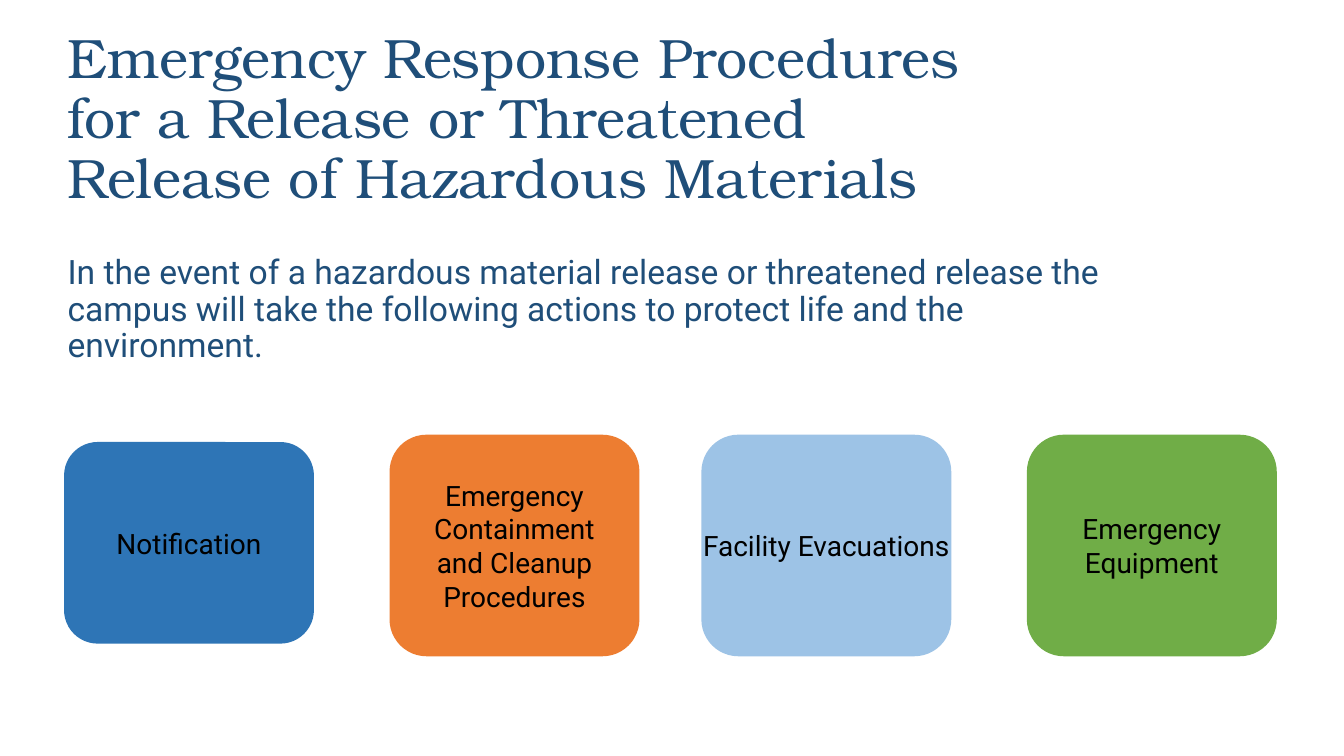
from pptx import Presentation
from pptx.dml.color import RGBColor
from pptx.enum.shapes import MSO_SHAPE
from pptx.enum.text import MSO_ANCHOR, PP_ALIGN
from pptx.util import Pt

PX = 9525
ROUNDED = MSO_SHAPE.ROUNDED_RECTANGLE
MIDDLE = MSO_ANCHOR.MIDDLE
LEFT, CENTER = PP_ALIGN.LEFT, PP_ALIGN.CENTER

NAVY = RGBColor(0x1F, 0x4E, 0x79)
BLACK = RGBColor(0x00, 0x00, 0x00)
BLUE = RGBColor(0x2E, 0x75, 0xB6)
ORANGE = RGBColor(0xED, 0x7D, 0x31)
LIGHT_BLUE = RGBColor(0x9D, 0xC3, 0xE6)
GREEN = RGBColor(0x70, 0xAD, 0x47)

HEADING_FONT = "TeX Gyre Bonum"
BODY_FONT = "Roboto"

CARD_WIDTH = 238
CARD_INSET = 14
CARDS = [
    ("Notification", BLUE, 61, 421, 192, True),
    ("Emergency Containment and Cleanup Procedures", ORANGE, 371, 414, 211, True),
    ("Facility Evacuations", LIGHT_BLUE, 668, 414, 211, False),
    ("Emergency Equipment", GREEN, 978, 414, 211, True),
]


def px(*lengths):
    return [length * PX for length in lengths]


def write(tf, text, font, size, color, align, spacing):
    tf.text = text
    p = tf.paragraphs[0]
    p.alignment = align
    p.line_spacing = spacing
    p.space_before = Pt(0)
    p.font.name = font
    p.font.size = Pt(size)
    p.font.color.rgb = color


def add_title(s, text):
    sp = s.shapes.title
    sp.left, sp.top, sp.width, sp.height = px(55, 61, 907, 108)
    tf = sp.text_frame
    tf.word_wrap = True
    tf.vertical_anchor = MIDDLE
    write(tf, text, HEADING_FONT, 39.6, NAVY, LEFT, 0.9)


def add_intro(s, text):
    tf = s.shapes.add_textbox(*px(55, 239, 1020, 119)).text_frame
    tf.word_wrap = True
    write(tf, text, BODY_FONT, 24, NAVY, LEFT, 0.9)


def add_card(s, text, color, left, top, height, wrap):
    sp = s.shapes.add_shape(ROUNDED, *px(left, top, CARD_WIDTH, height))
    sp.shadow.inherit = False
    sp.fill.solid()
    sp.fill.fore_color.rgb = color
    sp.line.fill.background()
    tf = sp.text_frame
    tf.word_wrap = wrap
    tf.vertical_anchor = MIDDLE
    tf.margin_left = tf.margin_right = CARD_INSET * PX
    write(tf, text, BODY_FONT, 20, BLACK, CENTER, 1.0)


def main():
    prs = Presentation()
    prs.slide_width, prs.slide_height = px(1280, 720)
    s = prs.slides.add_slide(prs.slide_layouts[5])
    add_title(s, "Emergency Response Procedures for a Release or Threatened "
                 "Release of Hazardous Materials")
    add_intro(s, "In the event of a hazardous material release or threatened "
                 "release the campus will take the following actions to "
                 "protect life and the environment.")
    for card in CARDS:
        add_card(s, *card)
    prs.save("out.pptx")


if __name__ == "__main__":
    main()
